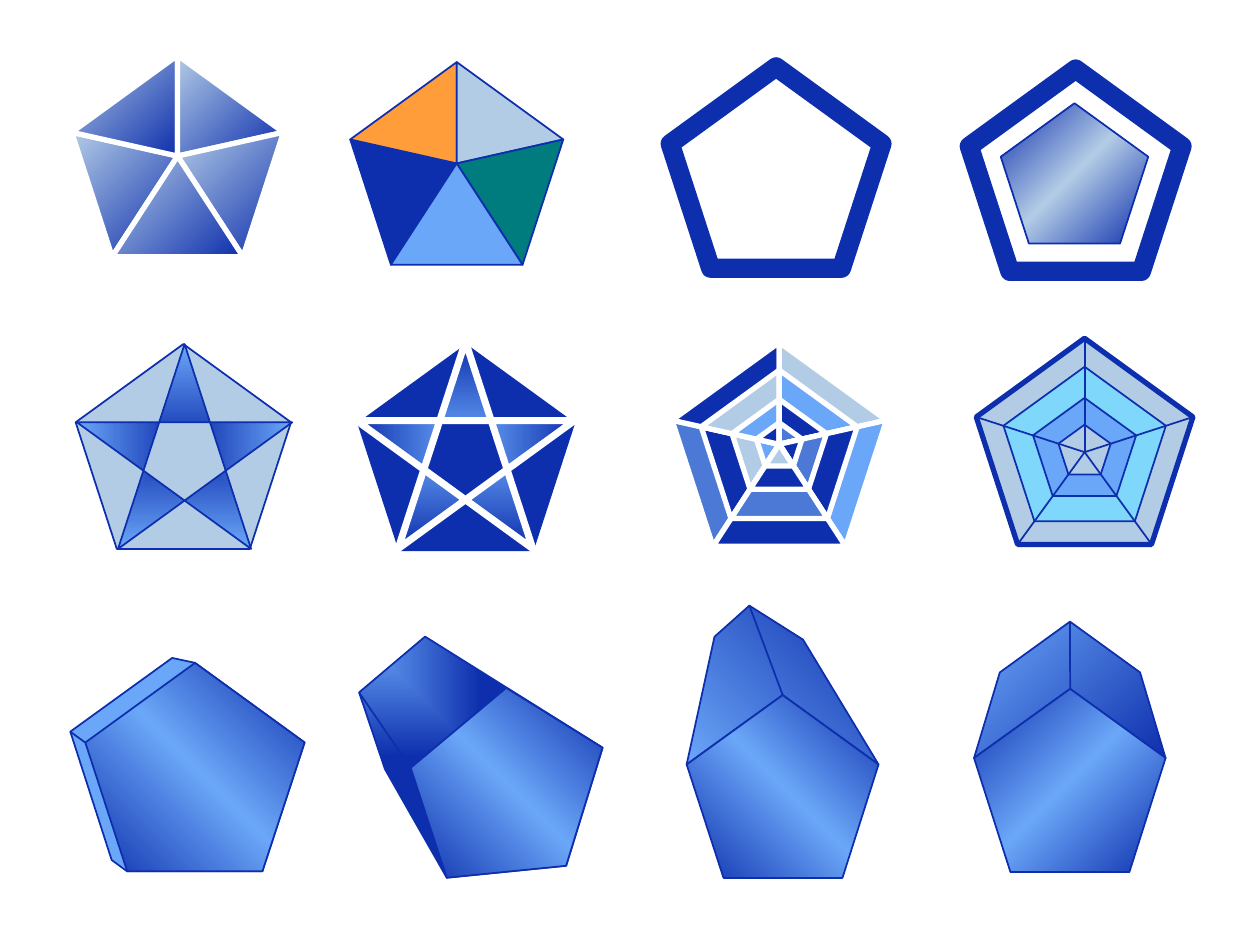
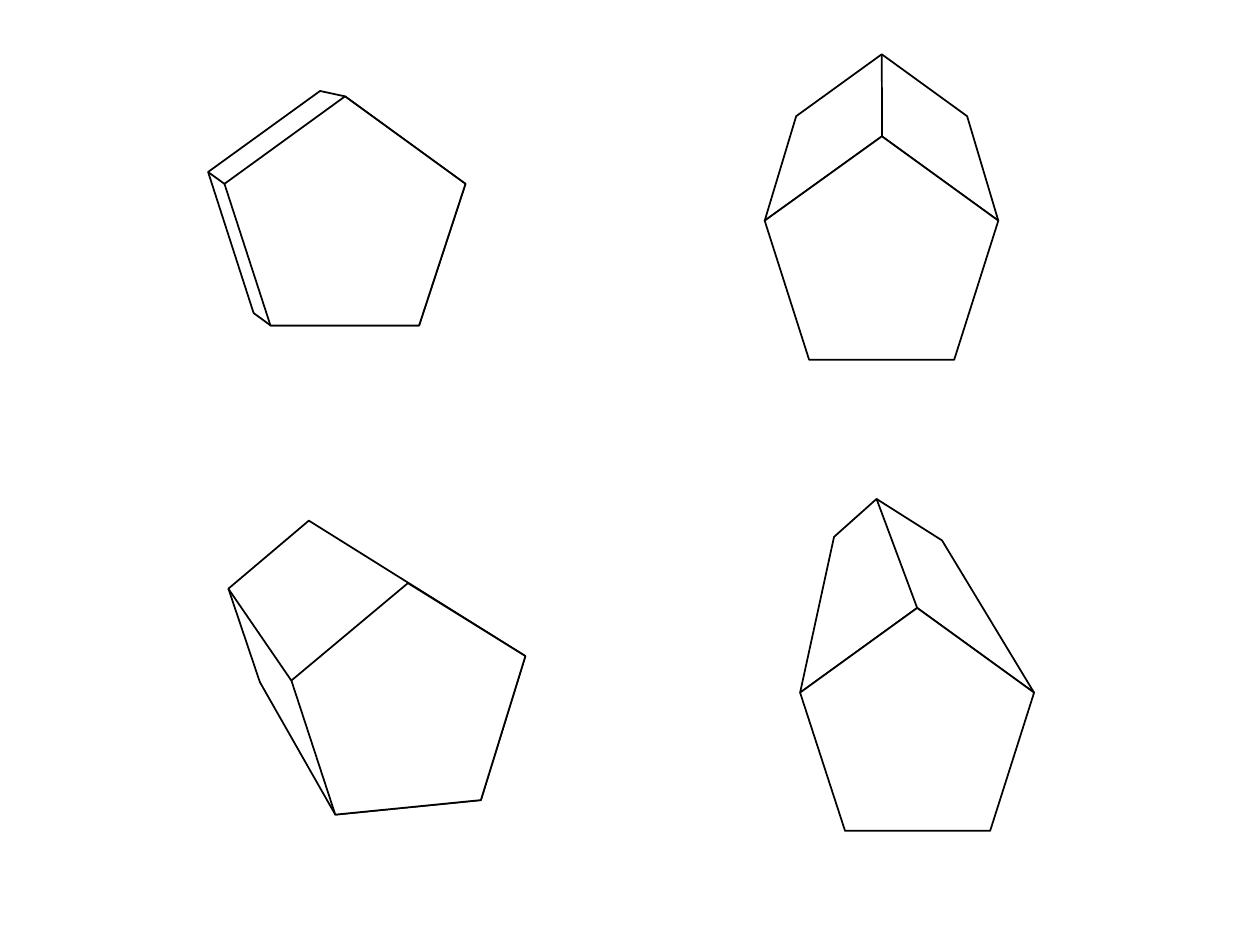
from collections import namedtuple
from math import cos, pi, sin

from lxml import etree
from pptx import Presentation
from pptx.dml.color import RGBColor
from pptx.enum.shapes import MSO_CONNECTOR
from pptx.oxml.ns import qn
from pptx.util import Pt

STRAIGHT = MSO_CONNECTOR.STRAIGHT

NAVY = RGBColor(0x0E, 0x2F, 0xAD)
BLUE = RGBColor(0x4B, 0x79, 0xD5)
SKY = RGBColor(0x6B, 0xA7, 0xF8)
CYAN = RGBColor(0x7F, 0xD7, 0xFC)
MIST = RGBColor(0xB3, 0xCC, 0xE6)
ORANGE = RGBColor(0xFF, 0x9D, 0x3B)
TEAL = RGBColor(0x00, 0x7B, 0x7E)
WHITE = RGBColor(0xFF, 0xFF, 0xFF)
BLACK = RGBColor(0x00, 0x00, 0x00)

Gradient = namedtuple("Gradient", "colors angle focus", defaults=(None, None))
Prism = namedtuple("Prism", "corners back front edge")

CENTER = (50, 50, 50, 50)
TOP_LEFT = (0, 0, 100, 100)
FADE = Gradient((MIST, NAVY), 45)
SHEEN_DOWN = Gradient((NAVY, SKY, NAVY), 45)
SHEEN_UP = Gradient((NAVY, SKY, NAVY), 315)

# Wedges run lower left, upper left, upper right, lower right, bottom.
WEDGES = [(3, 4), (4, 0), (0, 1), (1, 2), (2, 3)]
STAR_ORDER = [0, 3, 1, 4, 2]

FRAMES = [
    [((443.5, 101.8), 63.6, None, 11)],
    [((614.7, 103.4), 63.9, None, 11),
     ((614, 103.3), 44.3, Gradient((NAVY, MIST, NAVY), 45), 1)],
]

WHEELS = [
    ((261, 93.4), [64], NAVY, 1, [[NAVY], [ORANGE], [MIST], [TEAL], [SKY]]),
    ((101.5, 89.2), [63.6], WHITE, 3, [[FADE]] * 5),
    ((445.3, 253.9), [64.4, 46.9, 28.4, 13.7], WHITE, 3, [
        [BLUE, NAVY, MIST, SKY],
        [NAVY, MIST, SKY, NAVY],
        [MIST, SKY, NAVY, BLUE],
        [SKY, NAVY, BLUE, NAVY],
        [NAVY, BLUE, NAVY, MIST],
    ]),
]

STARS = [
    ((104.8, 261.3), (105.5, 261.3), 64.7, MIST, NAVY, 1,
     Gradient((NAVY, SKY), focus=CENTER), NAVY, 1),
    ((266.4, 262), (266, 260.6), 65.5, NAVY, None, 0,
     Gradient((SKY, NAVY), focus=CENTER), WHITE, 4),
]

WEB_CENTER = (619.8, 258.4)
WEB_RINGS = [(65.1, MIST, 3), (48.8, CYAN, 1), (31, SKY, 1), (15.7, MIST, 1)]

TOWER = Prism(
    dict(ridge=(43.7, 0), near=(19.4, 21.7), far=(81.1, 23.7),
         left=(0, 110.7), right=(133.7, 110.7), peak=(66.9, 62.3),
         base_l=(25.7, 189.7), base_r=(108.6, 189.7)),
    "peak left near ridge far right",
    "base_l left peak right base_r",
    "ridge peak")
HOUSE = TOWER._replace(corners=dict(
    ridge=(66.9, 0), near=(18, 35.4), far=(115.7, 35.4),
    left=(0, 95.1), right=(133.5, 95.1), peak=(67, 46.9),
    base_l=(25.4, 174.6), base_r=(108.3, 174.6)))
BLOCK = Prism(
    dict(ridge=(46, 0), rear=(0, 38.9), foot=(18, 92.3),
         left=(36, 91.4), right=(169.7, 77.4), peak=(102.6, 35.7),
         base_l=(61.1, 168), base_r=(144.3, 159.7)),
    "base_l foot rear ridge right base_r",
    "base_l left peak right base_r",
    "rear left")
SLAB = BLOCK._replace(
    corners=dict(ridge=(64, 0), rear=(0, 46.3), foot=(26, 126.9),
                 left=(9.4, 53.1), right=(147.1, 53.1), peak=(78.3, 3.1),
                 base_l=(35.7, 134), base_r=(120.6, 134)),
    back="base_l foot rear ridge peak right base_r")

COLOR_PRISMS = [
    (TOWER, (392.4, 346.1), 0.82, Gradient((SKY, NAVY), 315), SHEEN_UP),
    (HOUSE, (556.6, 355.2), 0.82, Gradient((SKY, NAVY), 45), SHEEN_DOWN),
    (BLOCK, (205.2, 363.8), 0.82, Gradient((SKY, NAVY), focus=TOP_LEFT), SHEEN_UP),
    (SLAB, (40.2, 376), 0.91, SKY, SHEEN_UP),
]
OUTLINE_PRISMS = [
    (TOWER, (457.2, 285.1), 1, WHITE, WHITE),
    (HOUSE, (437, 31), 1, WHITE, WHITE),
    (BLOCK, (130.5, 297.5), 1, WHITE, WHITE),
    (SLAB, (118.9, 52), 1, None, WHITE),
]


def pentagon(center, radius):
    cx, cy = center
    angles = [2 * pi * k / 5 - pi / 2 for k in range(5)]
    return [(cx + radius * cos(a), cy + radius * sin(a)) for a in angles]


def hub_pentagon(hub, radius):
    x, y = hub
    return pentagon((x, y + radius * (1 - cos(pi / 5)) / 2), radius)


def apply_gradient(sp, gradient):
    sp.fill.gradient()
    grad = sp.element.spPr.find(qn("a:gradFill"))
    for child in list(grad):
        grad.remove(child)
    stops = etree.SubElement(grad, qn("a:gsLst"))
    step = 100000 // (len(gradient.colors) - 1)
    for i, color in enumerate(gradient.colors):
        stop = etree.SubElement(stops, qn("a:gs"), pos=str(i * step))
        etree.SubElement(stop, qn("a:srgbClr"), val=str(color))
    if gradient.focus:
        shade = etree.SubElement(grad, qn("a:path"), path="rect")
        sides = {k: str(v * 1000) for k, v in zip("ltrb", gradient.focus)}
        etree.SubElement(shade, qn("a:fillToRect"), **sides)
    else:
        etree.SubElement(grad, qn("a:lin"), ang=str(gradient.angle * 60000), scaled="0")


def add_polygon(shapes, points, fill, line, width):
    points = [(Pt(x), Pt(y)) for x, y in points]
    builder = shapes.build_freeform(*points[0])
    builder.add_line_segments(points[1:], close=True)
    sp = builder.convert_to_shape()
    sp.shadow.inherit = False
    if fill is None:
        sp.fill.background()
    elif isinstance(fill, Gradient):
        apply_gradient(sp, fill)
    else:
        sp.fill.solid()
        sp.fill.fore_color.rgb = fill
    if line is None:
        sp.line.fill.background()
    else:
        sp.line.color.rgb = line
        sp.line.width = Pt(width)


def add_line(shapes, start, end, color):
    c = shapes.add_connector(STRAIGHT, *[Pt(v) for v in (*start, *end)])
    c.line.color.rgb = color
    c.line.width = Pt(1)
    etree.SubElement(c.element.spPr, qn("a:effectLst"))


def add_frame(shapes, parts):
    for center, radius, fill, width in parts:
        add_polygon(shapes, pentagon(center, radius), fill, NAVY, width)


def add_wheel(shapes, hub, radii, line, width, wedge_fills):
    for (i, j), fills in zip(WEDGES, wedge_fills):
        for radius, fill in zip(radii, fills):
            v = hub_pentagon(hub, radius)
            add_polygon(shapes, [hub, v[i], v[j]], fill, line, width)


def add_star(shapes, center, star_center, radius, fill, line, width,
             star_fill, star_line, star_width):
    add_polygon(shapes, pentagon(center, radius), fill, line, width)
    v = pentagon(star_center, radius)
    add_polygon(shapes, [v[k] for k in STAR_ORDER], star_fill, star_line, star_width)


def add_web(shapes):
    for radius, fill, width in WEB_RINGS:
        add_polygon(shapes, pentagon(WEB_CENTER, radius), fill, NAVY, width)
    for corner in pentagon(WEB_CENTER, WEB_RINGS[0][0]):
        add_line(shapes, WEB_CENTER, corner, NAVY)


def add_prism(shapes, prism, origin, scale, back_fill, front_fill, line):
    def place(names):
        return [tuple(o + scale * d for o, d in zip(origin, prism.corners[name]))
                for name in names.split()]

    add_polygon(shapes, place(prism.back), back_fill, line, 1)
    add_polygon(shapes, place(prism.front), front_fill, line, 1)
    add_line(shapes, *place(prism.edge), line)


def main():
    prs = Presentation()
    prs.slide_width, prs.slide_height = Pt(720), Pt(540)
    blank = prs.slide_layouts[6]
    color_slide, outline_slide = [prs.slides.add_slide(blank) for _ in range(2)]

    def group(slide):
        return slide.shapes.add_group_shape().shapes

    for parts in FRAMES:
        add_frame(group(color_slide), parts)
    for wheel in WHEELS:
        add_wheel(group(color_slide), *wheel)
    for star in STARS:
        add_star(group(color_slide), *star)
    add_web(group(color_slide))
    for slide, prisms, line in ((color_slide, COLOR_PRISMS, NAVY),
                                (outline_slide, OUTLINE_PRISMS, BLACK)):
        for prism in prisms:
            add_prism(group(slide), *prism, line)

    prs.save("out.pptx")


if __name__ == "__main__":
    main()
